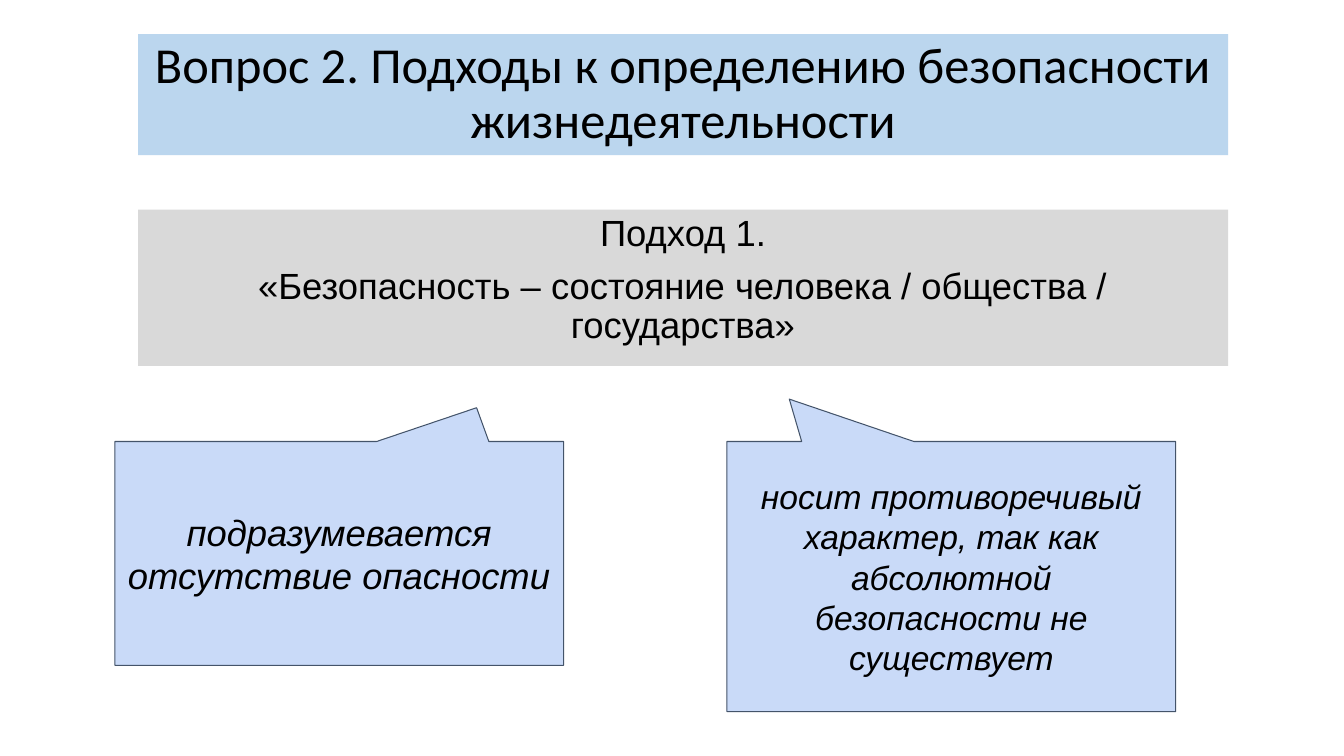
from dataclasses import dataclass

import pptx
import pptx.dml.color
import pptx.enum.shapes
import pptx.enum.text
import pptx.shapes.autoshape
import pptx.slide
import pptx.util

Inches = pptx.util.Inches
Shape = pptx.shapes.autoshape.Shape
Slide = pptx.slide.Slide
Kind = pptx.enum.shapes.MSO_SHAPE
Anchor = pptx.enum.text.MSO_ANCHOR


@dataclass(frozen=True)
class Banner:
    top: float
    height: float
    fill: str
    paragraphs: tuple[str, ...]
    font: str
    size: float
    anchor: Anchor
    space_before: float = 0


@dataclass(frozen=True)
class Callout:
    left: float
    height: float
    tail: tuple[float, float]
    remark: str
    size: float


BANNER_LEFT, BANNER_WIDTH = 1.37, 10.81
CALLOUT_TOP, CALLOUT_WIDTH = 4.38, 4.45
CALLOUT_FILL, CALLOUT_OUTLINE = "C9DAF8", "44546A"

BANNERS = (
    Banner(0.34, 1.2, "BBD6EE",
           ("Вопрос 2. Подходы к определению безопасности жизнедеятельности",),
           "Calibri", 36, Anchor.MIDDLE),
    Banner(2.08, 1.55, "D9D9D9",
           ("Подход 1.",
            "«Безопасность – состояние человека / общества / государства»"),
           "Arial", 26, Anchor.TOP, space_before=10),
)
CALLOUTS = (
    Callout(1.14, 2.22, (0.306, -0.651),
            "подразумевается отсутствие опасности", 26),
    Callout(7.21, 2.68, (-0.361, -0.657),
            "носит противоречивый характер, так как абсолютной "
            "безопасности не существует", 24),
)


def color(value: str) -> pptx.dml.color.RGBColor:
    return pptx.dml.color.RGBColor.from_string(value)


def add_panel(slide: Slide, kind: Kind, left: float, top: float,
              width: float, height: float, fill: str) -> Shape:
    panel = slide.shapes.add_shape(
        kind, Inches(left), Inches(top), Inches(width), Inches(height))
    panel.shadow.inherit = False
    panel.fill.solid()
    panel.fill.fore_color.rgb = color(fill)
    panel.line.fill.background()
    return panel


def write(panel: Shape, *paragraphs: str, size: float, font: str = "Arial",
          italic: bool = False, anchor: Anchor = Anchor.MIDDLE,
          inset: float = 0.05, line_spacing: float = 1.0,
          space_before: float = 0) -> None:
    frame = panel.text_frame
    frame.word_wrap = True
    frame.vertical_anchor = anchor
    frame.margin_left = frame.margin_right = Inches(0.1)
    frame.margin_top = frame.margin_bottom = Inches(inset)
    for index, text in enumerate(paragraphs):
        paragraph = frame.add_paragraph() if index else frame.paragraphs[0]
        paragraph.alignment = pptx.enum.text.PP_ALIGN.CENTER
        paragraph.line_spacing = line_spacing
        paragraph.space_before = pptx.util.Pt(space_before)
        run = paragraph.add_run()
        run.text = text
        run.font.name = font
        run.font.size = pptx.util.Pt(size)
        run.font.italic = italic
        run.font.color.rgb = color("000000")


def draw_banner(slide: Slide, banner: Banner) -> None:
    panel = add_panel(slide, Kind.RECTANGLE, BANNER_LEFT, banner.top,
                      BANNER_WIDTH, banner.height, banner.fill)
    write(panel, *banner.paragraphs, size=banner.size, font=banner.font,
          anchor=banner.anchor, line_spacing=0.9,
          space_before=banner.space_before)


def draw_callout(slide: Slide, callout: Callout) -> None:
    panel = add_panel(slide, Kind.ROUNDED_RECTANGULAR_CALLOUT, callout.left,
                      CALLOUT_TOP, CALLOUT_WIDTH, callout.height, CALLOUT_FILL)
    for index, value in enumerate((*callout.tail, 0)):
        panel.adjustments[index] = value
    panel.line.color.rgb = color(CALLOUT_OUTLINE)
    panel.line.width = pptx.util.Pt(0.75)
    write(panel, callout.remark, size=callout.size, italic=True, inset=0.1)


def main() -> None:
    presentation = pptx.Presentation()
    presentation.slide_width = Inches(13.33)
    presentation.slide_height = Inches(7.5)
    slide = presentation.slides.add_slide(presentation.slide_layouts[6])
    for banner in BANNERS:
        draw_banner(slide, banner)
    for callout in CALLOUTS:
        draw_callout(slide, callout)
    presentation.save("out.pptx")


if __name__ == "__main__":
    main()
